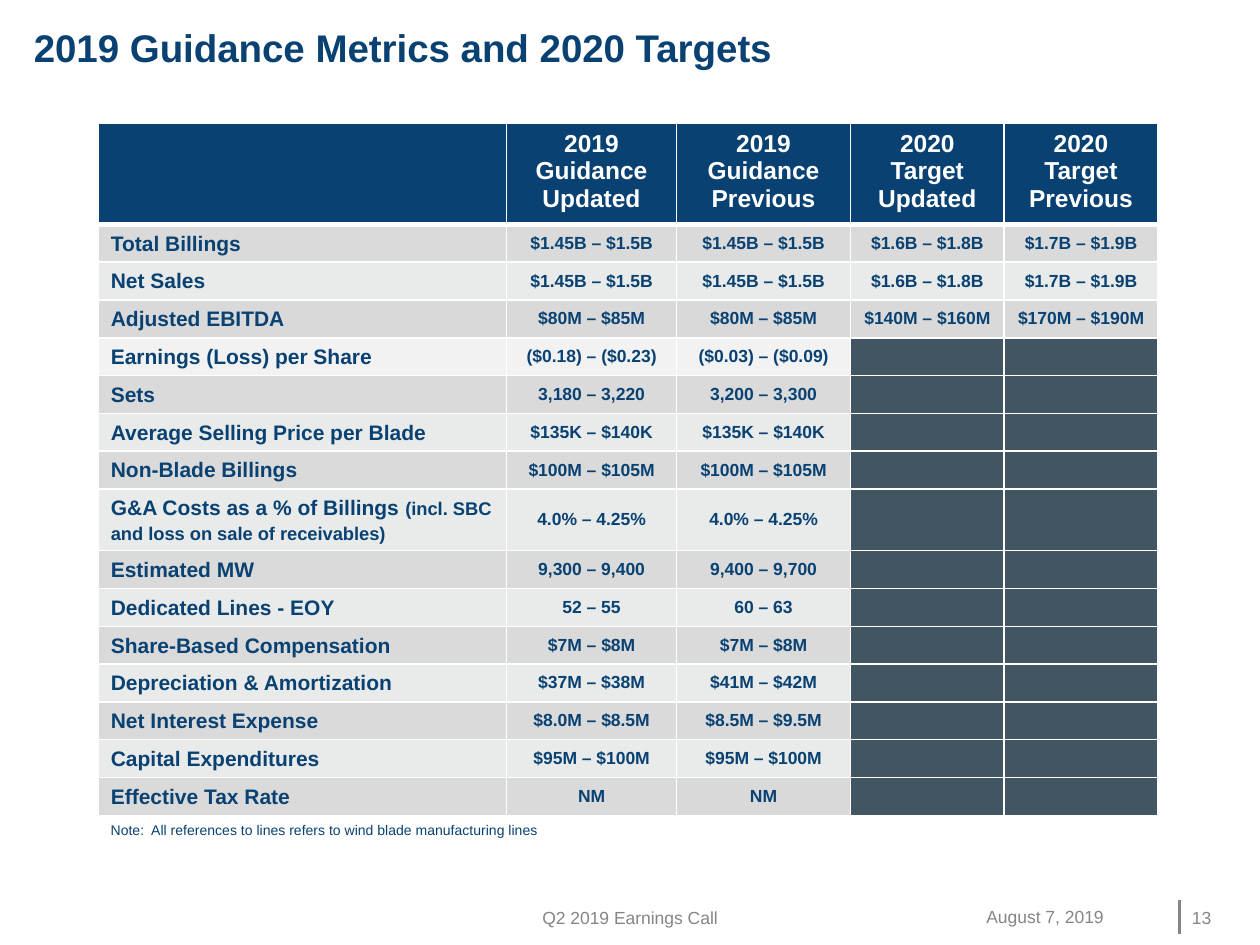
import pptx
import pptx.util
import pptx.dml.color
import pptx.enum.text
import pptx.enum.shapes
import pptx.oxml.ns
from lxml import etree

Inches = pptx.util.Inches
Pt = pptx.util.Pt
ALIGN = pptx.enum.text.PP_ALIGN
ANCHOR = pptx.enum.text.MSO_ANCHOR
qn = pptx.oxml.ns.qn

NAVY, WHITE, GRAY, SLATE = "094272", "FFFFFF", "848587", "425563"
DARK, LIGHT = "DADADA", "E9EAEA"
FILLS = {3: "D9D9D9", 4: "F2F2F2"}

HEADS = ["", "2019 Guidance Updated", "2019 Guidance Previous",
         "2020 Target\nUpdated", "2020 Target\nPrevious"]
ROWS = [
    ["Total Billings", "$1.45B – $1.5B", "$1.45B – $1.5B", "$1.6B – $1.8B", "$1.7B – $1.9B"],
    ["Net Sales", "$1.45B – $1.5B", "$1.45B – $1.5B", "$1.6B – $1.8B", "$1.7B – $1.9B"],
    ["Adjusted EBITDA", "$80M – $85M", "$80M – $85M", "$140M – $160M", "$170M – $190M"],
    ["Earnings (Loss) per Share", "($0.18) – ($0.23)", "($0.03) – ($0.09)"],
    ["Sets", "3,180 – 3,220", "3,200 – 3,300"],
    ["Average Selling Price per Blade", "$135K – $140K", "$135K – $140K"],
    ["Non-Blade Billings", "$100M – $105M", "$100M – $105M"],
    ["G&A Costs as a % of Billings ", "4.0% – 4.25%", "4.0% – 4.25%"],
    ["Estimated MW", "9,300 – 9,400", "9,400 – 9,700"],
    ["Dedicated Lines - EOY", "52 – 55", "60 – 63"],
    ["Share-Based Compensation", "$7M – $8M", "$7M – $8M"],
    ["Depreciation & Amortization", "$37M – $38M", "$41M – $42M"],
    ["Net Interest Expense", "$8.0M – $8.5M", "$8.5M – $9.5M"],
    ["Capital Expenditures", "$95M – $100M", "$95M – $100M"],
    ["Effective Tax Rate", "NM", "NM"],
]
COSTS = 8
SUFFIX = "(incl. SBC and loss on sale of receivables)"
WIDTHS = [3.24, 1.35, 1.38, 1.22, 1.22]


def color(code):
    return pptx.dml.color.RGBColor.from_string(code)


def apply(target, values):
    for name, value in values.items():
        setattr(target, name, value)


def add_run(para, text, size, code, bold=False):
    run = para.add_run()
    run.text = text
    apply(run.font, {"name": "Arial", "size": Pt(size), "bold": bold})
    run.font.color.rgb = color(code)


def add_label(slide, box, text, size, code, bold=False, align=ALIGN.LEFT, **frame):
    label = slide.shapes.add_textbox(*map(Inches, box)).text_frame
    apply(label, {"word_wrap": True, **frame})
    label.paragraphs[0].alignment = align
    add_run(label.paragraphs[0], text, size, code, bold)


def add_rule(slide, left, top, bottom):
    rule = slide.shapes.add_connector(
        pptx.enum.shapes.MSO_CONNECTOR.STRAIGHT, *map(Inches, (left, top, left, bottom)))
    rule.line.color.rgb = color(GRAY)
    rule.line.width = Pt(2)
    etree.SubElement(rule.element.spPr, qn("a:effectLst"))


def set_edges(cell, widths):
    props = cell._tc.get_or_add_tcPr()
    for side, width in widths.items():
        edge = etree.SubElement(props, qn("a:ln" + side), w=str(Pt(width)))
        fill = etree.SubElement(edge, qn("a:solidFill"))
        etree.SubElement(fill, qn("a:srgbClr"), val=WHITE)


def fill_cell(cell, text, size, code, back, align, anchor, edges):
    set_edges(cell, edges)
    cell.fill.solid()
    cell.fill.fore_color.rgb = color(back)
    cell.vertical_anchor = anchor
    frame = cell.text_frame
    for order, line in enumerate(text.split("\n")):
        para = frame.add_paragraph() if order else frame.paragraphs[0]
        para.alignment = align
        if line:
            add_run(para, line, size, code, True)
        else:
            etree.SubElement(para._p, qn("a:endParaRPr"), sz=str(size * 100))


def row_fill(row, col):
    if col > 2 and row > 3:
        return SLATE
    if (row, col) == (len(ROWS), 2):
        return "D9D9D9"
    return FILLS.get(row, DARK if row % 2 else LIGHT)


def add_metrics(slide):
    count = len(ROWS) + 1
    frame = slide.shapes.add_table(
        count, len(WIDTHS), *map(Inches, (0.78, 0.98, sum(WIDTHS), 5.47)))
    table = frame.table
    apply(table, {"first_row": False, "horz_banding": False})
    for col, width in enumerate(WIDTHS):
        table.columns[col].width = Inches(width)
    for row in range(count):
        table.rows[row].height = Inches({0: 0.78, COSTS: 0.49}.get(row, 0.3))
    edges = {"L": 1, "R": 1, "T": 1, "B": 1}
    for col, head in enumerate(HEADS):
        fill_cell(table.cell(0, col), head, 14, WHITE, NAVY,
                  ALIGN.CENTER, ANCHOR.TOP, {**edges, "B": 3})
    for row, texts in enumerate(ROWS, 1):
        sides = {**edges, "T": 3 if row == 1 else 1}
        for col in range(len(WIDTHS)):
            text = texts[col] if col < len(texts) else ""
            size, align = (10, ALIGN.CENTER) if col else (12, ALIGN.LEFT)
            fill_cell(table.cell(row, col), text, size, NAVY, row_fill(row, col),
                      align, ANCHOR.MIDDLE, sides)
        table.cell(row, 0).text_frame.paragraphs[0].line_spacing = Pt(14)
    add_run(table.cell(COSTS, 0).text_frame.paragraphs[0], SUFFIX, 10.5, NAVY, True)


def main():
    deck = pptx.Presentation()
    apply(deck, {"slide_width": Inches(10), "slide_height": Inches(7.5)})
    slide = deck.slides.add_slide(deck.slide_layouts[6])
    middle = {"vertical_anchor": ANCHOR.MIDDLE}
    flush = dict.fromkeys(["margin_left", "margin_right", "margin_top", "margin_bottom"], 0)
    add_label(slide, (4.2, 7.15, 1.6, 0.27), "Q2 2019 Earnings Call", 10, GRAY,
              align=ALIGN.CENTER, **{**middle, "word_wrap": False})
    add_rule(slide, 9.36, 7.14, 7.41)
    add_label(slide, (0.17, 0.14, 9.63, 0.79),
              "2019 Guidance Metrics and 2020 Targets", 22, NAVY, True)
    add_label(slide, (0.78, 6.47, 3.72, 0.24),
              "Note:  All references to lines refers to wind blade manufacturing lines",
              8, NAVY, word_wrap=False)
    add_metrics(slide)
    add_label(slide, (7.73, 7.14, 1.55, 0.27), "August 7, 2019", 10, GRAY, **middle)
    add_label(slide, (9.46, 7.15, 0.33, 0.27), "13", 10, GRAY, **middle, **flush)
    deck.save("out.pptx")


if __name__ == "__main__":
    main()
